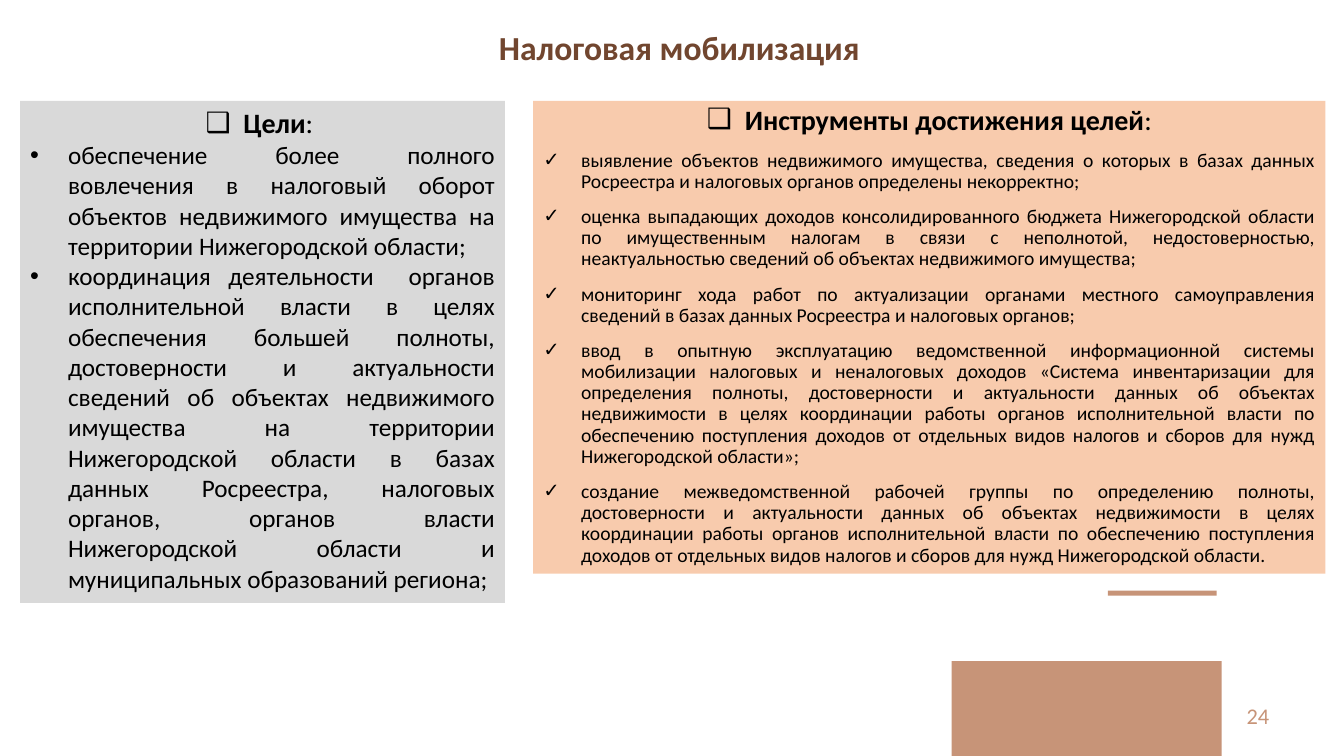
import pptx
import pptx.dml.color
import pptx.enum.shapes
import pptx.enum.text
import pptx.oxml.ns
import pptx.util
from lxml import etree

Pt = pptx.util.Pt
ALIGN = pptx.enum.text.PP_ALIGN
ANCHOR = pptx.enum.text.MSO_ANCHOR
COLORS = {"black": "000000", "brown": "71462F", "tan": "C79478",
          "gray": "D9D9D9", "peach": "F8CBAD"}
INDENT = 27

GOALS = [
    "обеспечение более полного вовлечения в налоговый оборот объектов недвижимого имущества на территории Нижегородской области;",
    "координация деятельности  органов исполнительной власти в целях обеспечения большей полноты, достоверности и актуальности сведений об объектах недвижимого имущества на территории Нижегородской области в базах данных Росреестра, налоговых органов, органов власти Нижегородской области и муниципальных образований региона;",
]
TOOLS = [
    "выявление объектов недвижимого имущества, сведения о которых в базах данных Росреестра и налоговых органов определены некорректно;",
    "оценка выпадающих доходов консолидированного бюджета Нижегородской области по имущественным налогам в связи с неполнотой, недостоверностью, неактуальностью сведений об объектах недвижимого имущества;",
    "мониторинг хода работ по актуализации органами местного самоуправления сведений в базах данных Росреестра и налоговых органов;",
    "ввод в опытную эксплуатацию ведомственной информационной системы мобилизации налоговых и неналоговых доходов «Система инвентаризации для определения полноты, достоверности и актуальности данных об объектах недвижимости в целях координации работы органов исполнительной власти по обеспечению поступления доходов от отдельных видов налогов и сборов для нужд Нижегородской области»;",
    "создание межведомственной рабочей группы по определению полноты, достоверности и актуальности данных об объектах недвижимости в целях координации работы органов исполнительной власти по обеспечению поступления доходов от отдельных видов налогов и сборов для нужд Нижегородской области.",
]


def rgb(name):
    return pptx.dml.color.RGBColor.from_string(COLORS[name])


def place(shape, box):
    shape.left, shape.top, shape.width, shape.height = map(Pt, box)


def frame(shape, anchor):
    text = shape.text_frame
    text.auto_size = pptx.enum.text.MSO_AUTO_SIZE.NONE
    text.word_wrap = True
    text.vertical_anchor = anchor
    return text


def write(par, text, size, color="black", bold=False, tail="",
          align=ALIGN.LEFT, line=1.0, before=0, mark=None):
    """Fill a paragraph; tail is added in regular weight, mark is the bullet."""
    if mark:
        props = par._p.get_or_add_pPr()
        props.set("marL", str(Pt(INDENT)))
        props.set("indent", str(-Pt(INDENT)))
        etree.SubElement(props, pptx.oxml.ns.qn("a:buChar")).set("char", mark)
    par.alignment = align
    par.line_spacing = line
    par.space_before = Pt(before)
    for part, heavy in ((text, bold), (tail, False)):
        if part:
            run = par.add_run()
            run.text = part
            run.font.name = "Calibri"
            run.font.size = Pt(size)
            run.font.bold = heavy
            run.font.color.rgb = rgb(color)


def panel(shape, box, fill, head, tail, items, size, mark, line=1.0, gap=0):
    place(shape, box)
    shape.fill.solid()
    shape.fill.fore_color.rgb = rgb(fill)
    text = frame(shape, ANCHOR.TOP)
    write(text.paragraphs[0], head, 20, bold=True, tail=tail,
          align=ALIGN.CENTER, line=line, mark="❑")
    for item in items:
        write(text.add_paragraph(), item, size, align=ALIGN.JUSTIFY,
              line=line, before=gap, mark=mark)


def header(shape, box):
    place(shape, box)
    text = frame(shape, ANCHOR.MIDDLE)
    write(text.paragraphs[0], "Налоговая мобилизация", 24, color="brown",
          bold=True, line=0.9)


def footer(slide, box):
    """Draw the tan bars and the page number."""
    left, top, width, height = box
    bars = ((left, top + 50.4, 193, height - 50.4),
            (left + 111.6, top, 77.8, 3.6))
    for bar in bars:
        shape = slide.shapes.add_shape(
            pptx.enum.shapes.MSO_SHAPE.RECTANGLE, *map(Pt, bar))
        shape.shadow.inherit = False
        shape.fill.solid()
        shape.fill.fore_color.rgb = rgb("tan")
        shape.line.fill.background()
    page = slide.shapes.add_textbox(
        Pt(left + 18), Pt(top + 74.9), Pt(width - 18), Pt(28.8))
    write(frame(page, ANCHOR.MIDDLE).paragraphs[0], "24", 16,
          color="tan", align=ALIGN.RIGHT)


def main():
    deck = pptx.Presentation()
    deck.slide_width, deck.slide_height = Pt(960), Pt(540)
    slide = deck.slides.add_slide(deck.slide_layouts[3])
    title, goals, tools = slide.placeholders
    header(title, (349.2, 9.4, 273.6, 52.6))
    panel(goals, (14.4, 72, 346.3, 358.6), "gray", "Цели", ": ",
          GOALS, 18, "•")
    panel(tools, (380.9, 72, 565.9, 337.7), "peach",
          "Инструменты достижения целей", ":", TOOLS, 14, "✓", 0.9, 10)
    footer(slide, (679.7, 421.9, 234, 118.1))
    deck.save("out.pptx")


if __name__ == "__main__":
    main()
